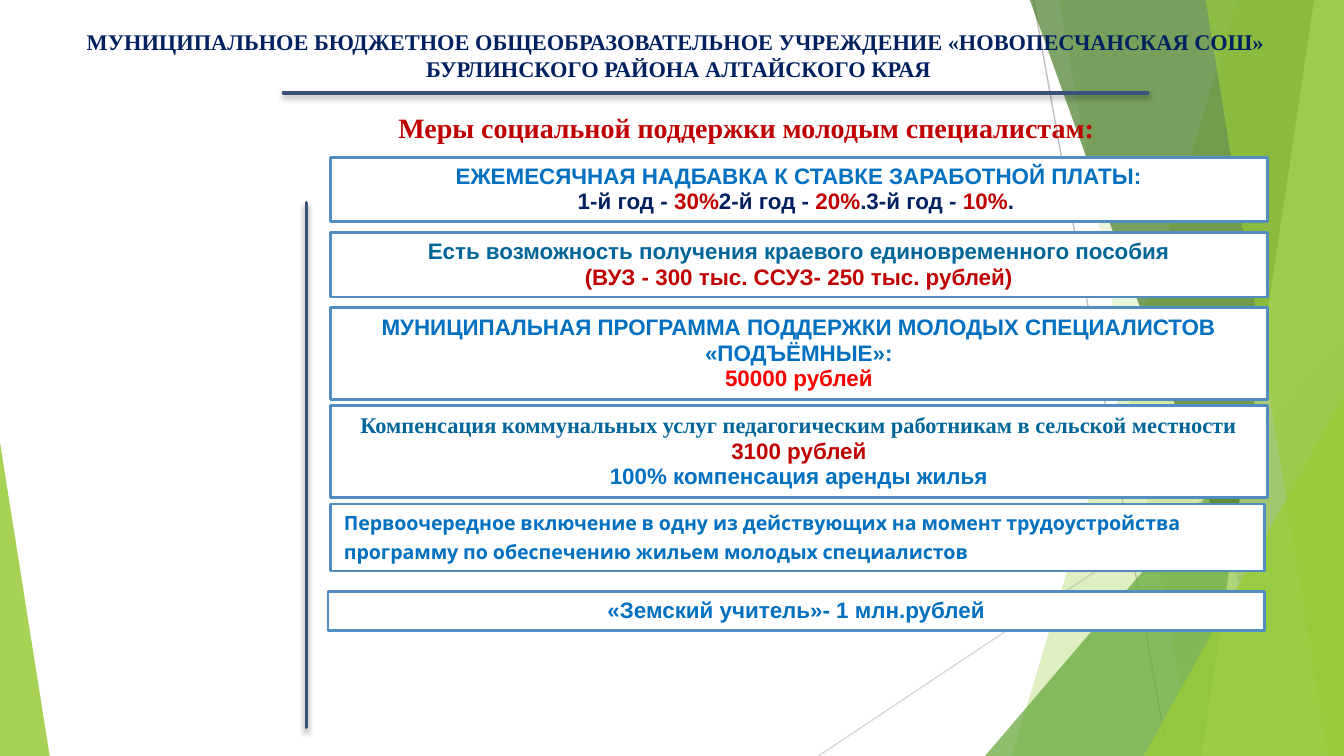
from lxml import etree
from pptx import Presentation
from pptx.dml.color import RGBColor
from pptx.enum import shapes, text
from pptx.oxml import ns
from pptx.util import Inches, Pt

NAVY, RED, BLUE, TEAL = "002060", "C00000", "0070C0", "006699"
SERIF, SANS = "Times New Roman", "Arial"
TOP, RIGHT = -0.01, 10
BOTTOM = RIGHT * 9 / 16

BANDS = [
    (9.21, 7.53, "99CB38", 30),
    (7.88, 8.87, "99CB38", 20),
    (7.66, 9.68, "4A7C29", 70),
    (9.78, 8.94, "C2E088", 70),
    (8.97, 9.88, "99CB38", 65),
]

MEASURES = [
    (2.46, 1.17, 6.97, 0.48, [
        [("ЕЖЕМЕСЯЧНАЯ НАДБАВКА К СТАВКЕ ЗАРАБОТНОЙ ПЛАТЫ:", BLUE, SANS)],
        [("1-й год - ", NAVY, SANS), ("30%", RED, SANS), ("2-й год - ", NAVY, SANS),
         ("20%", RED, SANS), (".3-й год - ", NAVY, SANS), ("10%", RED, SANS),
         (". ", NAVY, SANS)],
    ]),
    (2.46, 1.73, 6.97, 0.48, [
        [("Есть возможность получения краевого единовременного пособия", TEAL, SANS)],
        [("(ВУЗ - 300 тыс. ССУЗ- 250 тыс. рублей)", RED, SANS)],
    ]),
    (2.46, 2.29, 6.97, 0.68, [
        [("МУНИЦИПАЛЬНАЯ ПРОГРАММА ПОДДЕРЖКИ МОЛОДЫХ СПЕЦИАЛИСТОВ «ПОДЪЁМНЫЕ»:", BLUE, SANS)],
        [("50000 рублей", "FF0000", SANS)],
    ]),
    (2.46, 3.02, 6.97, 0.68, [
        [("Компенсация коммунальных услуг педагогическим работникам в сельской местности ",
          TEAL, SERIF), ("3100 рублей", RED, SANS)],
        [("100% компенсация аренды жилья", BLUE, SANS)],
    ]),
    (2.44, 4.4, 6.97, 0.29, [
        [("«Земский учитель»- 1 млн.рублей", BLUE, SANS)],
    ]),
]

HOUSING = (2.46, 3.75, 6.95, 0.5, [
    [("Первоочередное включение в одну из действующих на момент трудоустройства "
      "программу по обеспечению жильем молодых специалистов", BLUE, "Karla"),
     (" ", BLUE, "Karla")],
])


def rgb(value):
    return RGBColor.from_string(value)


def paint(shape, color, opacity):
    shape.shadow.inherit = False
    shape.fill.solid()
    shape.fill.fore_color.rgb = rgb(color)
    shape.line.fill.background()
    tint = shape.fill._xPr.find(".//" + ns.qn("a:srgbClr"))
    etree.SubElement(tint, ns.qn("a:alpha"), val=str(opacity * 1000))


def add_band(slide, top_x, bottom_x, color, opacity):
    outline = slide.shapes.build_freeform(Inches(top_x), Inches(TOP))
    corners = [(RIGHT, TOP), (RIGHT, BOTTOM), (bottom_x, BOTTOM)]
    outline.add_line_segments([(Inches(x), Inches(y)) for x, y in corners])
    paint(outline.convert_to_shape(), color, opacity)


def add_triangle(slide, left, top, width, apex, color, opacity):
    triangle = slide.shapes.add_shape(
        shapes.MSO_SHAPE.ISOSCELES_TRIANGLE,
        Inches(left), Inches(top), Inches(width), Inches(BOTTOM - top))
    triangle.adjustments[0] = apex
    paint(triangle, color, opacity)


def add_line(slide, start, end, color, width):
    line = slide.shapes.add_connector(
        shapes.MSO_CONNECTOR.STRAIGHT, *map(Inches, start + end))
    line.line.color.rgb = rgb(color)
    line.line.width = Pt(width)
    etree.SubElement(line._element.spPr, ns.qn("a:effectLst"))
    return line


def add_rule(slide, start, end):
    rule = add_line(slide, start, end, "39527B", 2)
    properties = rule._element.spPr
    properties.find(ns.qn("a:ln")).set("cap", "rnd")
    shadow = etree.SubElement(
        properties.find(ns.qn("a:effectLst")), ns.qn("a:outerShdw"),
        blurRad=str(Pt(3)), dist=str(Pt(2)), dir="5400000", rotWithShape="0")
    tint = etree.SubElement(shadow, ns.qn("a:srgbClr"), val="000000")
    etree.SubElement(tint, ns.qn("a:alpha"), val="35000")


def style(font, name, color):
    font.name = name
    font.color.rgb = rgb(color)


def write(frame, lines, size, spacing=None, align=text.PP_ALIGN.CENTER):
    for index, runs in enumerate(lines):
        paragraph = frame.add_paragraph() if index else frame.paragraphs[0]
        paragraph.alignment = align
        paragraph.line_spacing = spacing
        paragraph.font.size = Pt(size)
        paragraph.font.bold = True
        for words, color, name in runs:
            run = paragraph.add_run()
            run.text = words
            style(paragraph.font if len(runs) == 1 else run.font, name, color)


def set_margins(frame):
    frame.margin_left = frame.margin_right = Inches(0.07)
    frame.margin_top = frame.margin_bottom = Inches(0.04)
    frame.vertical_anchor = text.MSO_ANCHOR.TOP
    frame.auto_size = text.MSO_AUTO_SIZE.SHAPE_TO_FIT_TEXT


def add_school(slide):
    school = slide.shapes.add_textbox(Inches(0.53), Inches(0.17), Inches(9.04), Inches(0.48))
    set_margins(school.text_frame)
    school.text_frame.word_wrap = False
    write(school.text_frame, [
        [("МУНИЦИПАЛЬНОЕ БЮДЖЕТНОЕ ОБЩЕОБРАЗОВАТЕЛЬНОЕ УЧРЕЖДЕНИЕ «НОВОПЕСЧАНСКАЯ СОШ» ",
          NAVY, SERIF)],
        [("БУРЛИНСКОГО РАЙОНА АЛТАЙСКОГО КРАЯ", NAVY, SERIF)],
    ], 12)


def place_title(slide):
    title = slide.shapes.title
    title.left, title.top = Inches(1.63), Inches(0.8)
    title.width, title.height = Inches(7.85), Inches(0.31)
    set_margins(title.text_frame)
    title.text_frame.word_wrap = True
    write(title.text_frame, [
        [("Меры социальной поддержки молодым специалистам:", RED, SERIF)]], 15, 0.95)
    slide.shapes._spTree.append(title._element)


def add_box(slide, left, top, width, height):
    box = slide.shapes.add_shape(
        shapes.MSO_SHAPE.RECTANGLE, *map(Inches, (left, top, width, height)))
    box.shadow.inherit = False
    box.fill.solid()
    box.fill.fore_color.rgb = rgb("FFFFFF")
    box.line.color.rgb = rgb("528DC2")
    box.line.width = Pt(1.5)
    frame = box.text_frame
    frame.word_wrap = True
    frame.vertical_anchor = text.MSO_ANCHOR.MIDDLE
    frame.auto_size = text.MSO_AUTO_SIZE.SHAPE_TO_FIT_TEXT
    return frame


def add_housing(slide):
    *place, lines = HOUSING
    frame = add_box(slide, *place)
    write(frame, lines, 10.5, align=text.PP_ALIGN.LEFT)
    spacer = frame.paragraphs[0].runs[-1].font
    spacer.size = Pt(13.5)
    spacer.bold = False


def add_backdrop(slide):
    add_line(slide, (7.69, 0), (8.69, BOTTOM), "BFBFBF", 0.75)
    add_line(slide, (RIGHT, 3.02), (6.09, BOTTOM), "D9D9D9", 0.75)
    for band in BANDS[:2]:
        add_band(slide, *band)
    add_triangle(slide, 7.33, 2.5, 2.67, 1, "63A537", 72)
    for band in BANDS[2:]:
        add_band(slide, *band)
    add_triangle(slide, 8.51, 2.94, 1.49, 1, "99CB38", 80)
    add_triangle(slide, 0, 3.29, 0.37, 0, "99CB38", 85)


def main():
    deck = Presentation()
    deck.slide_width, deck.slide_height = Inches(RIGHT), Inches(BOTTOM)
    slide = deck.slides.add_slide(deck.slide_layouts[5])
    add_backdrop(slide)
    add_school(slide)
    add_rule(slide, (2.11, 0.69), (8.54, 0.69))
    place_title(slide)
    add_rule(slide, (2.28, 1.51), (2.28, 5.41))
    for *place, lines in MEASURES:
        write(add_box(slide, *place), lines, 12, 0.95)
    add_housing(slide)
    deck.save("out.pptx")


if __name__ == "__main__":
    main()
